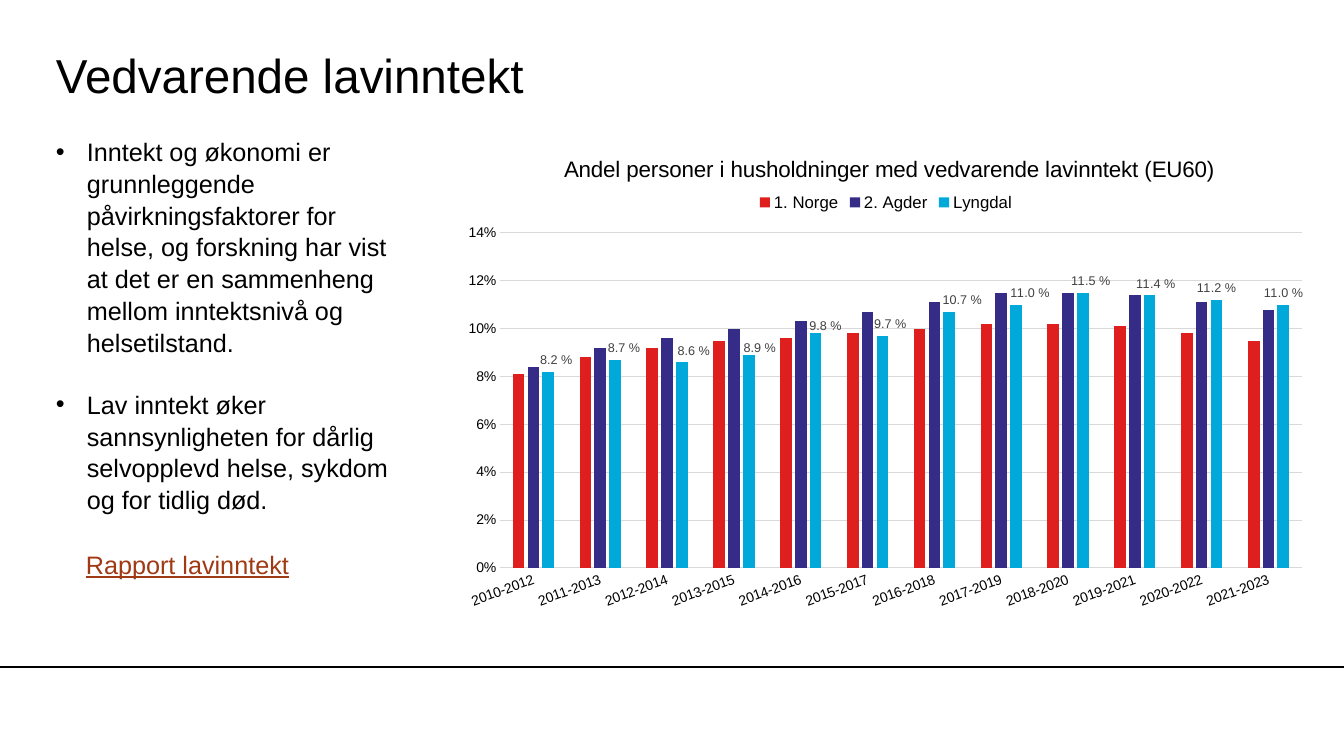
from copy import deepcopy

from lxml import etree
from pptx import Presentation
from pptx.chart.data import CategoryChartData
from pptx.dml.color import RGBColor
from pptx.enum.chart import (XL_CHART_TYPE as ChartType, XL_LABEL_POSITION as LabelPosition,
                             XL_LEGEND_POSITION as LegendPosition, XL_TICK_MARK as TickMark)
from pptx.enum.shapes import MSO_CONNECTOR as Connector
from pptx.enum.text import MSO_ANCHOR as Anchor
from pptx.oxml.ns import qn
from pptx.util import Pt

SCALE = 914400 / 100.8
FONT = "Arial"
COLORS = {"ink": "000000", "link": "9F3A14", "grid": "D9D9D9", "label": "404040",
          "norge": "DF1F1D", "agder": "342C86", "lyngdal": "00A9DA"}
PERIODS = [f"{year}-{year + 2}" for year in range(2010, 2022)]
SERIES = [
    ("1. Norge", "norge", [8.1, 8.8, 9.2, 9.5, 9.6, 9.8, 10, 10.2, 10.2, 10.1, 9.8, 9.5]),
    ("2. Agder", "agder", [8.4, 9.2, 9.6, 10, 10.3, 10.7, 11.1, 11.5, 11.5, 11.4, 11.1, 10.8]),
    ("Lyngdal", "lyngdal", [8.2, 8.7, 8.6, 8.9, 9.8, 9.7, 10.7, 11, 11.5, 11.4, 11.2, 11]),
]
LABEL_SHIFTS = [(8, 0), (9, 0), (12, 0), (11, 5), (10, 4), (8, 0), (13, 0), (14, 0), (8, 0), (6, 0)]
POINTS = [
    "Inntekt og økonomi er grunnleggende påvirkningsfaktorer for helse, og forskning har "
    "vist at det er en sammenheng mellom inntektsnivå og helsetilstand.",
    "Lav inntekt øker sannsynligheten for dårlig selvopplevd helse, sykdom og for tidlig død.",
]


def px(length):
    return round(length * SCALE)


def rgb(name):
    return RGBColor.from_string(COLORS[name])


def style(font, size, color="ink", underline=None):
    font.name, font.size, font.bold, font.underline = FONT, Pt(size), False, underline
    font.color.rgb = rgb(color)


def add_text(page, box, paragraphs, size=18, color="ink", underline=None, inset=None,
             anchor=Anchor.TOP, indent=0, line_spacing=None, gap=0):
    frame = page.shapes.add_textbox(*map(px, box)).text_frame
    frame.word_wrap, frame.vertical_anchor = True, anchor
    if inset is not None:
        frame.margin_left = frame.margin_right = frame.margin_top = frame.margin_bottom = px(inset)
    for index, text in enumerate(paragraphs):
        para = frame.add_paragraph() if index else frame.paragraphs[0]
        if indent:
            properties = para._p.get_or_add_pPr()
            properties.set("marL", str(px(indent)))
            properties.set("indent", str(-px(indent)))
            etree.SubElement(properties, qn("a:buFont")).set("typeface", FONT)
            etree.SubElement(properties, qn("a:buChar")).set("char", "•")
        if line_spacing:
            para.line_spacing = line_spacing
        if index:
            para.space_before = Pt(gap)
        span = para.add_run()
        span.text = text
        style(span.font, size, color, underline)


def set_layout(element, position, **values):
    for old in element.findall(qn("c:layout")):
        element.remove(old)
    layout = etree.Element(qn("c:layout"))
    manual = etree.SubElement(layout, qn("c:manualLayout"))
    for tag, value in values.items():
        etree.SubElement(manual, qn(f"c:{tag}")).set("val", str(value))
    element.insert(position, layout)


def shift_labels(labels, width, height):
    group = labels._element
    shared = [child for child in group if child.tag != qn("c:dLbl")]
    for index, (right, down) in enumerate(LABEL_SHIFTS):
        label = etree.Element(qn("c:dLbl"))
        etree.SubElement(label, qn("c:idx")).set("val", str(index))
        label.extend([deepcopy(child) for child in shared if child.tag != qn("c:showLeaderLines")])
        set_layout(label, 1, x=round(right / width, 4), y=round(down / height, 4))
        group.insert(index, label)


def style_axes(chart):
    periods, shares = chart.category_axis, chart.value_axis
    for axis in (periods, shares):
        axis.major_tick_mark = axis.minor_tick_mark = TickMark.NONE
        style(axis.tick_labels.font, 10)
    periods.tick_labels._element.txPr.find(qn("a:bodyPr")).set("rot", "-1200000")
    shares.minimum_scale, shares.maximum_scale, shares.major_unit = 0, 0.14, 0.02
    shares.tick_labels.number_format = "0%"
    shares.tick_labels.number_format_is_linked = False
    shares.format.line.fill.background()
    for line in (periods.format.line, shares.major_gridlines.format.line):
        line.color.rgb, line.width = rgb("grid"), Pt(0.75)


def add_income_chart(page, box):
    width, height = box[2:]
    data = CategoryChartData(number_format="0.0%")
    data.categories = PERIODS
    for name, _, percents in SERIES:
        data.add_series(name, [round(percent / 100, 3) for percent in percents])
    chart = page.shapes.add_chart(ChartType.COLUMN_CLUSTERED, *map(px, box), data).chart
    style(chart.font, 10)
    title = chart.chart_title
    span = title.text_frame.paragraphs[0].add_run()
    span.text = "Andel personer i husholdninger med vedvarende lavinntekt (EU60)"
    style(span.font, 16)
    title.include_in_layout = False
    set_layout(title._element, 1, xMode="edge", yMode="edge",
               x=round(108 / width, 4), y=round(21 / height, 4))
    chart.has_legend = True
    legend = chart.legend
    legend.position, legend.include_in_layout = LegendPosition.TOP, False
    style(legend.font, 12)
    set_layout(legend._element, 1, xMode="edge", yMode="edge", x=round(302 / width, 4),
               y=round(60 / height, 4), w=round(264 / width, 4), h=round(25 / height, 4))
    style_axes(chart)
    plot = chart.plots[0]
    plot.gap_width, plot.overlap, plot.vary_by_categories = 219, -27, False
    for series, (_, color, _) in zip(plot.series, SERIES):
        series.format.fill.solid()
        series.format.fill.fore_color.rgb = rgb(color)
    labels = plot.series[-1].data_labels
    labels.show_value, labels.position = True, LabelPosition.OUTSIDE_END
    labels.number_format, labels.number_format_is_linked = r"0.0\ %", False
    style(labels.font, 9, "label")
    shift_labels(labels, width, height)
    set_layout(chart._chartSpace.chart.plotArea, 0, layoutTarget="inner", xMode="edge",
               yMode="edge", x=round(48 / width, 4), y=round(103 / height, 4),
               w=round(802 / width, 4), h=round(335 / height, 4))


def add_explanation(page, box):
    left, top, width, height = box
    add_text(page, (left, top, width, 377), POINTS, indent=31, line_spacing=1.05, gap=21.7)
    add_text(page, (left + 30, top + height - 40, 267, 40), ["Rapport lavinntekt"],
             color="link", underline=True)


def add_footer_line(page, box):
    left, top, width, _ = map(px, box)
    rule = page.shapes.add_connector(Connector.STRAIGHT, left, top, left + width, top)
    rule.line.color.rgb, rule.line.width = rgb("ink"), Pt(0.75)
    etree.SubElement(rule._element.spPr, qn("a:effectLst"))


def main():
    """Build the slide about persistent low income."""
    deck = Presentation()
    deck.slide_width, deck.slide_height = px(1344), px(756)
    page = deck.slides.add_slide(deck.slide_layouts[6])
    add_footer_line(page, (0, 667, 1344, 0))
    add_text(page, (56, 36, 1119, 76), ["Vedvarende lavinntekt"], size=34, inset=0,
             anchor=Anchor.MIDDLE)
    add_explanation(page, (46, 130, 353, 454))
    add_income_chart(page, (452, 130, 868, 489))
    deck.save("out.pptx")


if __name__ == "__main__":
    main()
